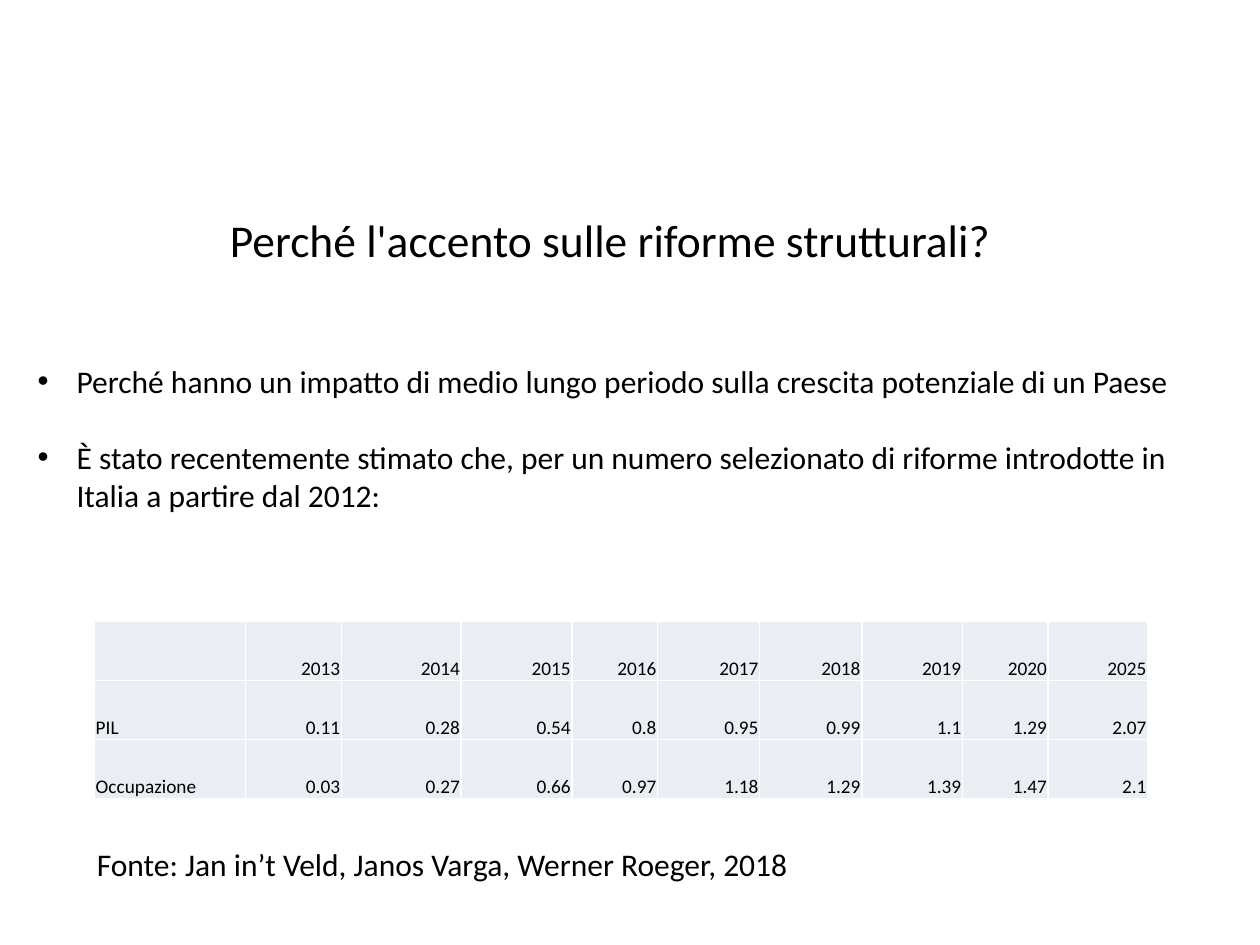
from lxml import etree
from pptx import Presentation
from pptx.dml.color import RGBColor
from pptx.enum.text import MSO_ANCHOR, PP_ALIGN
from pptx.oxml import parse_xml
from pptx.oxml.ns import nsdecls, qn
from pptx.util import Inches, Pt

FONT = "Calibri"
BLACK, WHITE, CELL_FILL = "000000", "FFFFFF", "E9EDF4"

TITLE = "Perché l'accento sulle riforme strutturali?"
REASONS = [
    "Perché hanno un impatto di medio lungo periodo sulla crescita potenziale di un Paese",
    "È stato recentemente stimato che, per un numero selezionato di riforme introdotte in "
    "Italia a partire dal 2012:",
]
IMPACTS = [
    ["", "2013", "2014", "2015", "2016", "2017", "2018", "2019", "2020", "2025"],
    ["PIL", "0.11", "0.28", "0.54", "0.8", "0.95", "0.99", "1.1", "1.29", "2.07"],
    ["Occupazione", "0.03", "0.27", "0.66", "0.97", "1.18", "1.29", "1.39", "1.47", "2.1"],
]
COLUMN_WIDTHS = [1.2, 0.76, 0.95, 0.88, 0.68, 0.81, 0.81, 0.8, 0.68, 0.79]
SOURCE = "Fonte: Jan in’t Veld, Janos Varga, Werner Roeger, 2018"


def color(hex_code):
    return RGBColor.from_string(hex_code)


def write(paragraph, text, size, align=PP_ALIGN.LEFT):
    paragraph.text = text
    paragraph.alignment = align
    paragraph.font.name = FONT
    paragraph.font.size = Pt(size)
    paragraph.font.color.rgb = color(BLACK)


def add_title(slide, left, top, width, height):
    title = slide.shapes.title
    title.left, title.top, title.width, title.height = left, top, width, height
    title.text_frame.vertical_anchor = MSO_ANCHOR.MIDDLE
    write(title.text_frame.paragraphs[0], TITLE, 26, PP_ALIGN.CENTER)


def add_text_frame(slide, left, top, width, height):
    frame = slide.shapes.add_textbox(left, top, width, height).text_frame
    frame.word_wrap = True
    return frame


def add_bullet(paragraph, indent):
    properties = paragraph._p.get_or_add_pPr()
    properties.set("marL", str(indent))
    properties.set("indent", str(-indent))
    bullet_font = parse_xml(f'<a:buFont {nsdecls("a")} typeface="Arial"/>')
    bullet = parse_xml(f'<a:buChar {nsdecls("a")} char="•"/>')
    default_run = properties.find(qn("a:defRPr"))
    default_run.addprevious(bullet_font)
    default_run.addprevious(bullet)


def add_reasons(slide, left, top, width, height):
    frame = add_text_frame(slide, left, top, width, height)
    for index, reason in enumerate(REASONS):
        paragraph = frame.paragraphs[0] if index == 0 else frame.add_paragraph()
        write(paragraph, reason, 18)
        if index:
            paragraph.space_before = Pt(22)
        add_bullet(paragraph, Inches(0.31))


def add_borders(cell, hex_code, weight):
    properties = cell._tc.get_or_add_tcPr()
    for position, side in enumerate(("lnL", "lnR", "lnT", "lnB")):
        line = etree.Element(qn(f"a:{side}"), w=str(Pt(weight)))
        fill = etree.SubElement(line, qn("a:solidFill"))
        etree.SubElement(fill, qn("a:srgbClr"), val=hex_code)
        properties.insert(position, line)


def add_impact_table(slide, left, top, width, height):
    table = slide.shapes.add_table(
        len(IMPACTS), len(COLUMN_WIDTHS), left, top, width, height
    ).table
    for column, column_width in zip(table.columns, COLUMN_WIDTHS):
        column.width = Inches(column_width)
    for row_index, values in enumerate(IMPACTS):
        for column_index, value in enumerate(values):
            cell = table.cell(row_index, column_index)
            cell.fill.solid()
            cell.fill.fore_color.rgb = color(CELL_FILL)
            cell.vertical_anchor = MSO_ANCHOR.BOTTOM
            cell.margin_left = cell.margin_right = cell.margin_top = Inches(0.01)
            cell.margin_bottom = 0
            align = PP_ALIGN.RIGHT if column_index else PP_ALIGN.LEFT
            write(cell.text_frame.paragraphs[0], value, 11, align)
            add_borders(cell, WHITE, 1)


def add_source(slide, left, top, width, height):
    frame = add_text_frame(slide, left, top, width, height)
    write(frame.paragraphs[0], SOURCE, 18)


def main():
    presentation = Presentation()
    presentation.slide_width = Inches(10)
    presentation.slide_height = Inches(7.5)
    slide = presentation.slides.add_slide(presentation.slide_layouts[5])
    add_title(slide, Inches(0.04), Inches(1.39), Inches(9.61), Inches(1.02))
    add_reasons(slide, Inches(0.2), Inches(2.82), Inches(9.37), Inches(2.22))
    add_impact_table(slide, Inches(0.75), Inches(4.93), Inches(8.35), Inches(1.41))
    add_source(slide, Inches(0.67), Inches(6.66), Inches(6.77), Inches(0.5))
    presentation.save("out.pptx")


if __name__ == "__main__":
    main()
